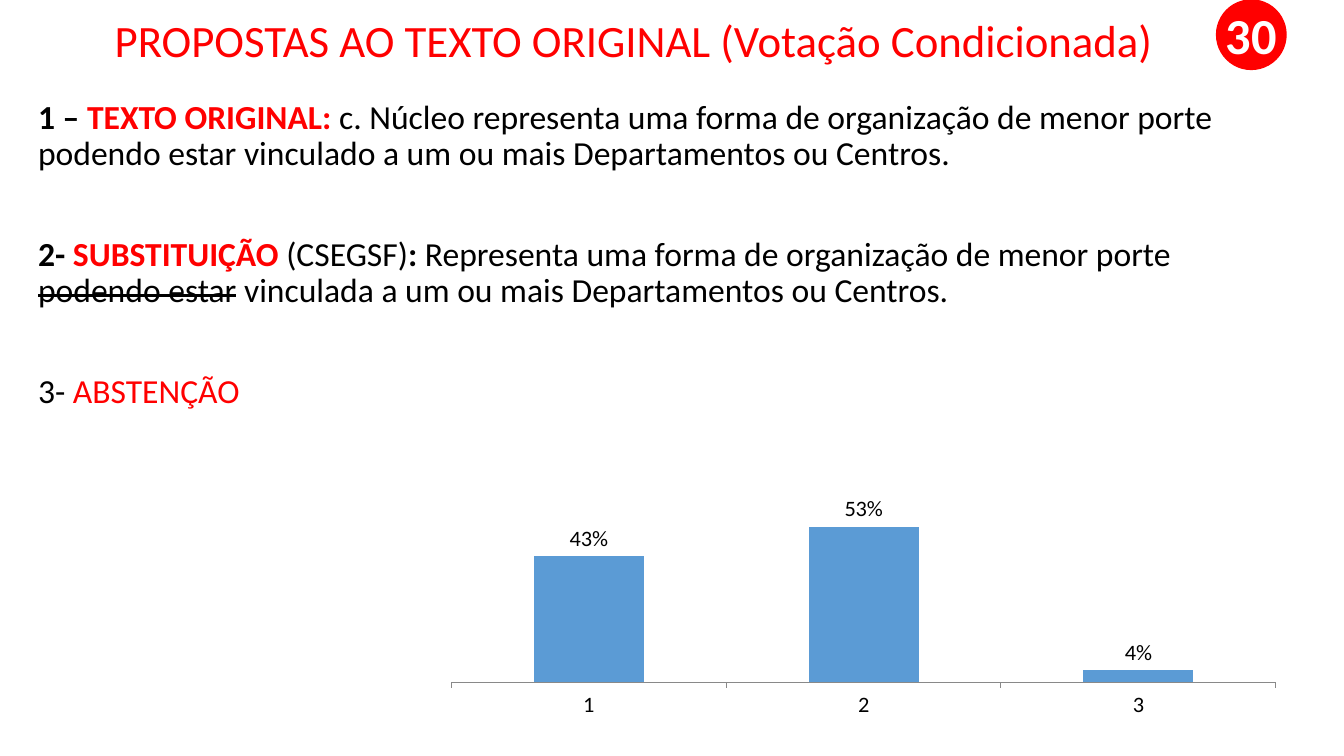
import pptx
import pptx.util
import pptx.dml.color
import pptx.chart.data
import pptx.enum.chart
import pptx.enum.shapes
import pptx.enum.text
import pptx.oxml
import pptx.oxml.ns

Cm = pptx.util.Cm
Pt = pptx.util.Pt
RED, BLACK, WHITE, BLUE, GRAY = "FF0000", "000000", "FFFFFF", "5B9BD5", "898989"


def rgb(value):
    return pptx.dml.color.RGBColor.from_string(value)


class Deck:
    font = "Calibri"

    def __init__(self):
        self.prs = pptx.Presentation()
        self.prs.slide_width = Cm(33.87)
        self.prs.slide_height = Cm(19.05)
        self.s = self.prs.slides.add_slide(self.prs.slide_layouts[6])

    def style(self, font, size, color, bold=None):
        font.name = self.font
        font.size = Pt(size)
        font.color.rgb = rgb(color)
        font.bold = bold

    def textbox(self, box, anchor):
        sp = self.s.shapes.add_textbox(*map(Cm, box))
        tf = sp.text_frame
        tf.word_wrap = True
        tf.vertical_anchor = anchor
        return tf

    def title(self, box, text):
        tf = self.textbox(box, pptx.enum.text.MSO_ANCHOR.MIDDLE)
        tf.margin_bottom = Cm(1.36)
        p = tf.paragraphs[0]
        p.text = text
        p.alignment = pptx.enum.text.PP_ALIGN.CENTER
        p.line_spacing = 0.9
        self.style(p.font, 32, RED)

    def proposals(self, box, items, size, gap):
        tf = self.textbox(box, pptx.enum.text.MSO_ANCHOR.TOP)
        for i, runs in enumerate(items):
            p = tf.add_paragraph() if i else tf.paragraphs[0]
            p.line_spacing = 0.9
            p.space_before = Pt(gap if i else 0)
            for text, color, bold, strike in runs:
                r = p.add_run()
                r.text = text
                self.style(r.font, size, color, bold)
                if strike:
                    r._r.get_or_add_rPr().set("strike", "sngStrike")

    def badge(self, box, text):
        sp = self.s.shapes.add_shape(pptx.enum.shapes.MSO_SHAPE.OVAL, *map(Cm, box))
        sp.shadow.inherit = False
        sp.fill.solid()
        sp.fill.fore_color.rgb = rgb(RED)
        sp.line.color.rgb = rgb(RED)
        sp.line.width = Pt(1)
        tf = sp.text_frame
        tf.word_wrap = False
        tf.margin_left = tf.margin_right = tf.margin_top = tf.margin_bottom = 0
        tf.vertical_anchor = pptx.enum.text.MSO_ANCHOR.MIDDLE
        p = tf.paragraphs[0]
        p.text = text
        p.alignment = pptx.enum.text.PP_ALIGN.CENTER
        self.style(p.font, 36, WHITE, True)

    def votes(self, box, cats, vals, layout):
        data = pptx.chart.data.CategoryChartData(number_format="0%")
        data.categories = cats
        data.add_series("Series 1", vals)
        kind = pptx.enum.chart.XL_CHART_TYPE.COLUMN_CLUSTERED
        chart = self.s.shapes.add_chart(kind, *map(Cm, box), data).chart
        self.style(chart.font, 16, BLACK)
        chart.has_legend = False
        chart.has_title = False
        axis = chart.category_axis
        axis.major_tick_mark = pptx.enum.chart.XL_TICK_MARK.OUTSIDE
        axis.format.line.color.rgb = rgb(GRAY)
        axis.format.line.width = Pt(0.75)
        axis = chart.value_axis
        axis.has_major_gridlines = False
        axis.minimum_scale = 0
        axis.maximum_scale = 0.6
        axis.visible = False
        plot = chart.plots[0]
        plot.gap_width = 150
        plot.vary_by_categories = False
        fill = plot.series[0].format.fill
        fill.solid()
        fill.fore_color.rgb = rgb(BLUE)
        plot.has_data_labels = True
        labels = plot.data_labels
        labels.show_value = True
        labels.number_format = "0%"
        labels.number_format_is_linked = False
        labels.position = pptx.enum.chart.XL_LABEL_POSITION.OUTSIDE_END
        self.place_plot(chart, layout)

    def place_plot(self, chart, layout):
        area = chart._chartSpace.chart.plotArea
        for old in area.findall(pptx.oxml.ns.qn("c:layout")):
            area.remove(old)
        modes = '<c:layoutTarget val="inner"/><c:xMode val="edge"/><c:yMode val="edge"/>'
        sizes = "".join(f'<c:{k} val="{v}"/>' for k, v in zip("xywh", layout))
        area.insert(0, pptx.oxml.parse_xml(
            f'<c:layout {pptx.oxml.ns.nsdecls("c")}><c:manualLayout>'
            f'{modes}{sizes}</c:manualLayout></c:layout>'))


def main():
    deck = Deck()
    deck.title((0.41, -0.64, 31.14, 4.7),
               "PROPOSTAS AO TEXTO ORIGINAL (Votação Condicionada)")
    deck.proposals((0.71, 2.41, 30.84, 14.76), [
        [("1 – ", BLACK, True, False),
         ("TEXTO ORIGINAL: ", RED, True, False),
         ("c. Núcleo representa uma forma de organização de menor porte podendo "
          "estar vinculado a um ou mais Departamentos ou Centros.", BLACK, False, False)],
        [("2- ", BLACK, True, False),
         ("SUBSTITUIÇÃO ", RED, True, False),
         ("(CSEGSF)", BLACK, False, False),
         (": ", BLACK, True, False),
         ("Representa uma forma de organização de menor porte ", BLACK, False, False),
         ("podendo estar", BLACK, False, True),
         (" vinculada a um ou mais Departamentos ou Centros.", BLACK, False, False)],
        [("3- ", BLACK, False, False),
         ("ABSTENÇÃO", RED, False, False)],
    ], size=24, gap=46)
    deck.votes((10.72, 12.5, 21.87, 5.84), ("1", "2", "3"), (0.43, 0.53, 0.04),
               layout=(0.03, 0.03, 0.95, 0.77))
    deck.badge((30.66, 0, 1.75, 1.75), "30")
    deck.prs.save("out.pptx")


if __name__ == "__main__":
    main()
